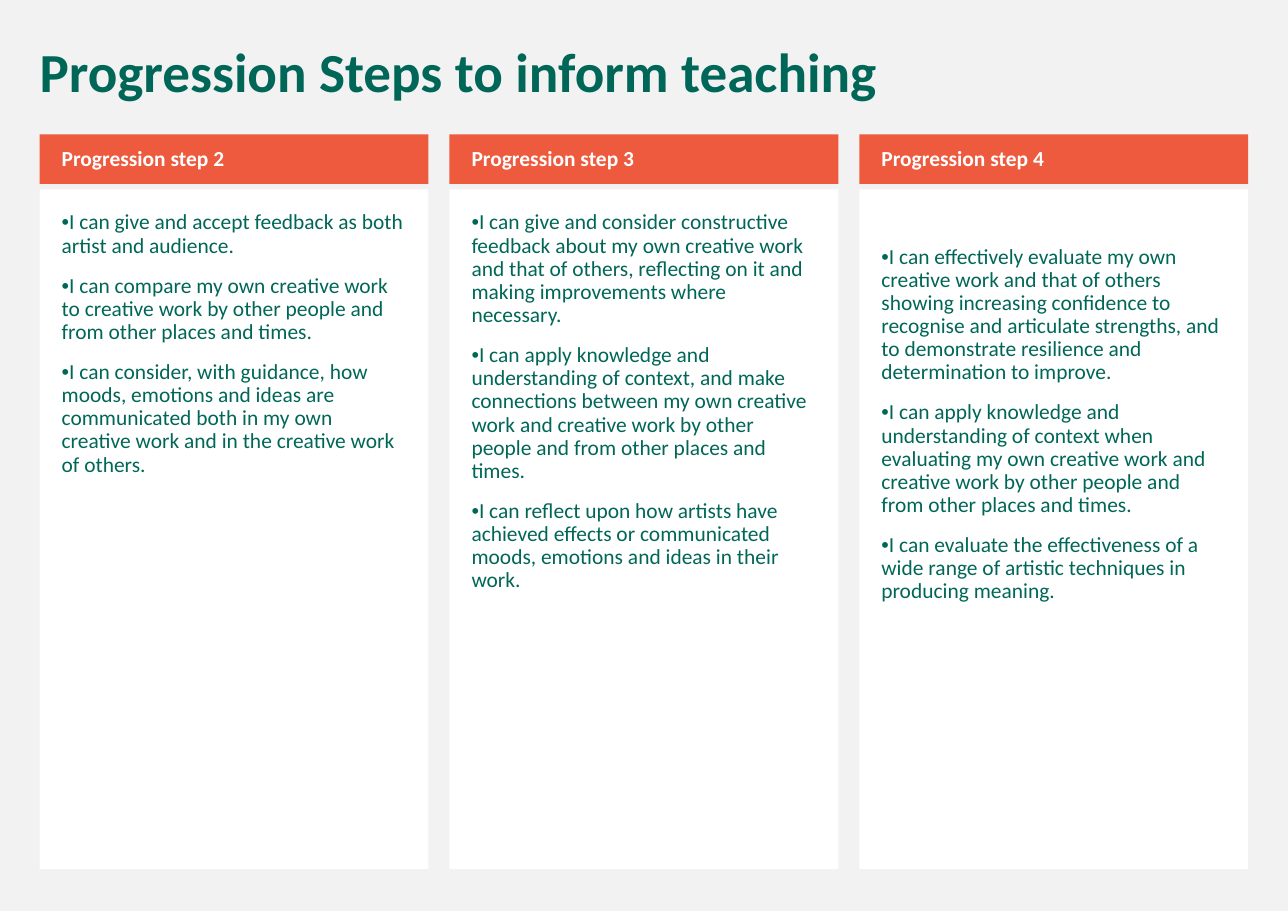
from dataclasses import dataclass

from pptx import Presentation
from pptx import util as u
from pptx.dml.color import RGBColor
from pptx.enum import shapes, text


@dataclass(frozen=True)
class Theme:
    background: str = "F2F2F2"
    panel: str = "FFFFFF"
    header: str = "ED5A3E"
    ink: str = "006758"
    header_ink: str = "FFFFFF"
    font: str = "Calibri"
    bullet_font: str = "Arial"
    title_size: int = 36
    text_size: int = 14


WIDTH, HEIGHT = 11.69, 8.27
MARGIN, COLUMN_WIDTH = 0.36, 3.53
HEADER_ROW = (1.22, 0.45)
BODY_ROW = (1.72, 6.17)
TITLE = "Progression Steps to inform teaching"

# Heading, top inset of the panel, statements
STEPS = [
    ("Progression step 2", 0.2, [
        "I can give and accept feedback as both artist and audience.",
        "I can compare my own creative work to creative work by other people "
        "and from other places and times.",
        "I can consider, with guidance, how moods, emotions and ideas are "
        "communicated both in my own creative work and in the creative work of others.",
    ]),
    ("Progression step 3", 0.2, [
        "I can give and consider constructive feedback about my own creative work and "
        "that of others, reflecting on it and making improvements where necessary.",
        "I can apply knowledge and understanding of context, and make connections between "
        "my own creative work and creative work by other people and from other places and times.",
        "I can reflect upon how artists have achieved effects or communicated moods, "
        "emotions and ideas in their work.",
    ]),
    ("Progression step 4", 0.51, [
        "I can effectively evaluate my own creative work and that of others showing increasing "
        "confidence to recognise and articulate strengths, and to demonstrate resilience and "
        "determination to improve.",
        "I can apply knowledge and understanding of context when evaluating my own creative work "
        "and creative work by other people and from other places and times.",
        "I can evaluate the effectiveness of a wide range of artistic techniques in "
        "producing meaning.",
    ]),
]


class StepsSlide:
    def __init__(self, presentation, theme):
        self.theme = theme
        self.slide = presentation.slides.add_slide(presentation.slide_layouts[5])
        background = self.slide.background.fill
        background.solid()
        background.fore_color.rgb = RGBColor.from_string(theme.background)

    def set_text(self, shape, lines, color, size, bold=False, bullet="",
                 anchor=text.MSO_ANCHOR.TOP, insets=(0.1, 0.05, 0.1, 0.05)):
        """Fill a shape with one paragraph per line; insets run left, top, right, bottom."""
        frame = shape.text_frame
        frame.word_wrap = True
        frame.auto_size = text.MSO_AUTO_SIZE.NONE
        frame.vertical_anchor = anchor
        (frame.margin_left, frame.margin_top,
         frame.margin_right, frame.margin_bottom) = map(u.Inches, insets)
        for index, line in enumerate(lines):
            paragraph = frame.add_paragraph() if index else frame.paragraphs[0]
            paragraph.alignment = text.PP_ALIGN.LEFT
            paragraph.line_spacing = 0.9
            paragraph.space_before = u.Pt(11)
            for words, font in ((bullet, self.theme.bullet_font), (line, self.theme.font)):
                if words:
                    run = paragraph.add_run()
                    run.text = words
                    run.font.name = font
                    run.font.size = u.Pt(size)
                    run.font.bold = bold
                    run.font.color.rgb = RGBColor.from_string(color)

    def title(self, words):
        shape = self.slide.shapes.title
        shape.left, shape.top = u.Inches(0.26), u.Inches(0.36)
        shape.width, shape.height = u.Inches(11.08), u.Inches(0.65)
        self.set_text(shape, [words], self.theme.ink, self.theme.title_size, bold=True)

    def block(self, column, row, fill):
        """Add a plain rectangle in a grid column; row is its top and height."""
        pitch = (WIDTH - 2 * MARGIN - COLUMN_WIDTH) / (len(STEPS) - 1)
        top, height = row
        shape = self.slide.shapes.add_shape(
            shapes.MSO_SHAPE.RECTANGLE, u.Inches(MARGIN + column * pitch), u.Inches(top),
            u.Inches(COLUMN_WIDTH), u.Inches(height))
        shape.shadow.inherit = False
        shape.fill.solid()
        shape.fill.fore_color.rgb = RGBColor.from_string(fill)
        shape.line.fill.background()
        return shape

    def header(self, column, words):
        self.set_text(self.block(column, HEADER_ROW, self.theme.header), [words],
                      self.theme.header_ink, self.theme.text_size, bold=True,
                      anchor=text.MSO_ANCHOR.MIDDLE, insets=(0.2, 0.05, 0.1, 0.05))

    def statements(self, column, lines, top_inset):
        self.set_text(self.block(column, BODY_ROW, self.theme.panel), lines,
                      self.theme.ink, self.theme.text_size, bullet="•",
                      insets=(0.2, top_inset, 0.2, 0.2))


def main():
    presentation = Presentation()
    presentation.slide_width = u.Inches(WIDTH)
    presentation.slide_height = u.Inches(HEIGHT)
    slide = StepsSlide(presentation, Theme())
    slide.title(TITLE)
    for column, (heading, top_inset, lines) in enumerate(STEPS):
        slide.statements(column, lines, top_inset)
        slide.header(column, heading)
    presentation.save("out.pptx")


if __name__ == "__main__":
    main()
